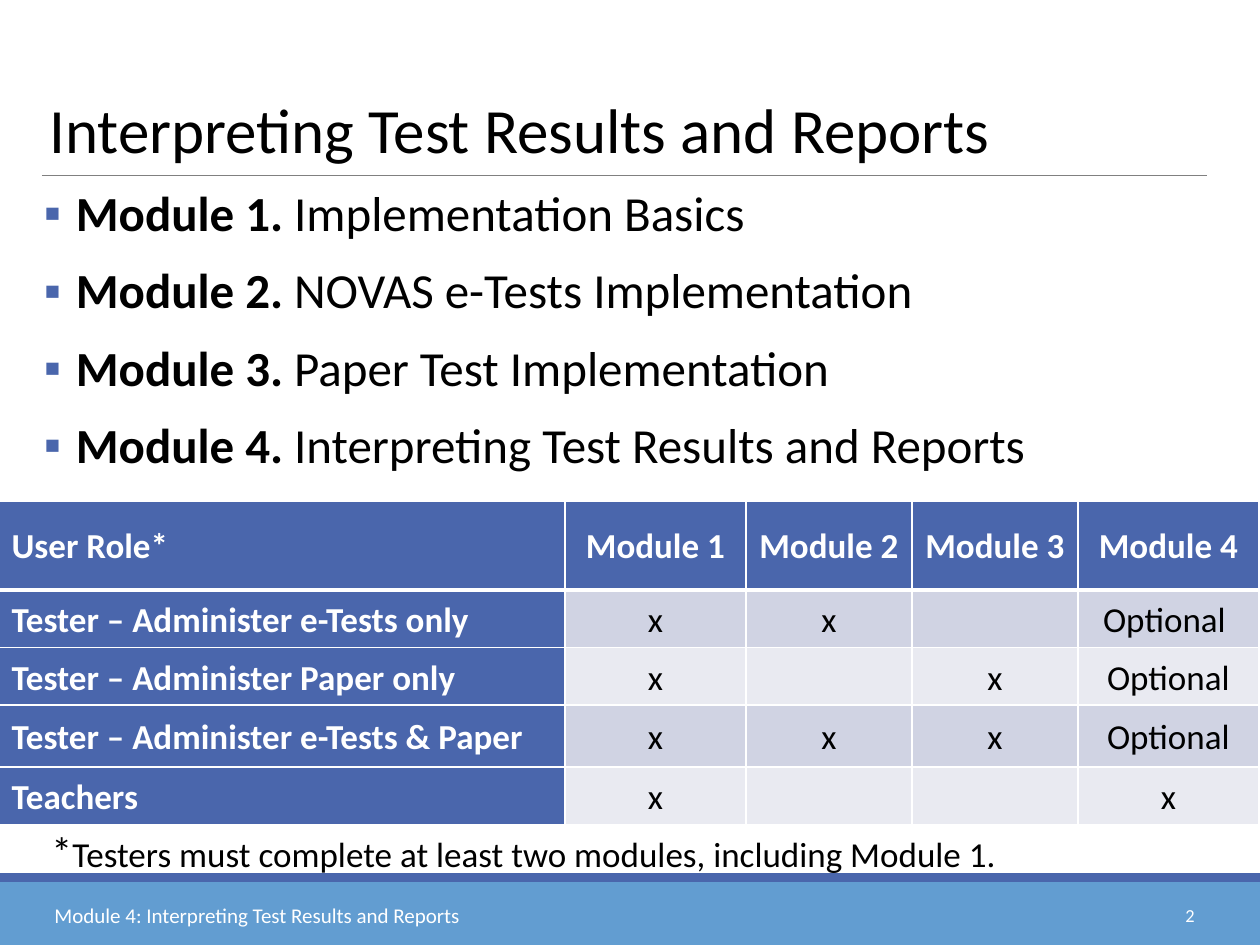
from lxml import etree
from pptx import Presentation
from pptx.dml.color import RGBColor
from pptx.enum.shapes import MSO_CONNECTOR, MSO_SHAPE
from pptx.enum.text import MSO_ANCHOR, PP_ALIGN
from pptx.oxml.ns import qn
from pptx.util import Pt

RECTANGLE = MSO_SHAPE.RECTANGLE
STRAIGHT = MSO_CONNECTOR.STRAIGHT
TOP, MIDDLE = MSO_ANCHOR.TOP, MSO_ANCHOR.MIDDLE
LEFT, CENTER, RIGHT = PP_ALIGN.LEFT, PP_ALIGN.CENTER, PP_ALIGN.RIGHT

PIXELS_PER_INCH = 126
WIDTH, HEIGHT = 1260, 945
FONT = "Calibri"
BLACK, WHITE, GRAY = "000000", "FFFFFF", "808080"
INDIGO, SKY = "4A66AC", "629DD1"
BANDS = ["D0D3E3", "E9EAF1"]

TITLE = "Interpreting Test Results and Reports"
MODULES = [
    "Implementation Basics",
    "NOVAS e-Tests Implementation",
    "Paper Test Implementation",
    TITLE,
]
ROLES = [
    ["User Role*"] + [f"Module {number}" for number in range(1, 5)],
    ["Tester – Administer e-Tests only", "x", "x", "", "Optional "],
    ["Tester – Administer Paper only", "x", "", "x", "Optional"],
    ["Tester – Administer e-Tests & Paper", "x", "x", "x", "Optional"],
    ["Teachers", "x", "", "", "x"],
]
COLUMN_WIDTHS = [566, 181, 166, 166, 181]
ROW_HEIGHTS = [89, 55, 55, 62, 55]


def px(value):
    return round(value * 914400 / PIXELS_PER_INCH)


def color(value):
    return RGBColor.from_string(value)


class SlideBuilder:
    def __init__(self, slide, font):
        self.slide = slide
        self.font = font

    def rectangle(self, left, top, width, height, fill):
        shape = self.slide.shapes.add_shape(
            RECTANGLE, px(left), px(top), px(width), px(height))
        shape.shadow.inherit = False
        shape.fill.solid()
        shape.fill.fore_color.rgb = color(fill)
        shape.line.fill.background()

    def line(self, left, top, right, bottom, stroke, points):
        connector = self.slide.shapes.add_connector(
            STRAIGHT, px(left), px(top), px(right), px(bottom))
        connector.line.color.rgb = color(stroke)
        connector.line.width = Pt(points)
        properties = connector._element.spPr
        etree.SubElement(properties, qn("a:effectLst"))

    def run(self, paragraph, text, size, text_color=BLACK, bold=False):
        run = paragraph.add_run()
        run.text = text
        run.font.name = self.font
        run.font.size = Pt(size)
        run.font.bold = bold
        run.font.color.rgb = color(text_color)

    def text_frame(self, left, top, width, height, anchor=TOP):
        box = self.slide.shapes.add_textbox(
            px(left), px(top), px(width), px(height))
        frame = box.text_frame
        frame.word_wrap = True
        frame.vertical_anchor = anchor
        return frame

    def text(self, left, top, width, height, runs, anchor=TOP,
             align=LEFT, text_color=BLACK, indent=0):
        frame = self.text_frame(left, top, width, height, anchor)
        paragraph = frame.paragraphs[0]
        paragraph.alignment = align
        if indent:
            paragraph._p.get_or_add_pPr().set("marL", str(px(indent)))
        for text, size in runs:
            self.run(paragraph, text, size, text_color)

    def bullets(self, left, top, width, height, items, size, indent):
        frame = self.text_frame(left, top, width, height)
        frame.margin_left = frame.margin_right = 0
        for index, (label, text) in enumerate(items):
            paragraph = frame.add_paragraph() if index else frame.paragraphs[0]
            paragraph.line_spacing = 0.9
            paragraph.space_before = Pt(12)
            paragraph.space_after = Pt(2)
            properties = paragraph._p.get_or_add_pPr()
            properties.set("marL", str(px(indent)))
            properties.set("indent", str(-px(indent)))
            bullet_color = etree.SubElement(properties, qn("a:buClr"))
            etree.SubElement(bullet_color, qn("a:srgbClr"), val=INDIGO)
            etree.SubElement(properties, qn("a:buFont"), typeface="Arial")
            etree.SubElement(properties, qn("a:buChar"), char="▪")
            self.run(paragraph, label, size, bold=True)
            self.run(paragraph, text, size)

    def borders(self, cell, widths):
        properties = cell._tc.get_or_add_tcPr()
        for side, points in zip("LRTB", widths):
            border = etree.SubElement(
                properties, qn(f"a:ln{side}"), w=str(Pt(points)))
            fill = etree.SubElement(border, qn("a:solidFill"))
            etree.SubElement(fill, qn("a:srgbClr"), val=WHITE)

    def table(self, left, top, column_widths, row_heights, rows, size):
        table = self.slide.shapes.add_table(
            len(rows), len(column_widths), px(left), px(top),
            px(sum(column_widths)), px(sum(row_heights))).table
        for column, width in zip(table.columns, column_widths):
            column.width = px(width)
        for row, height in zip(table.rows, row_heights):
            row.height = px(height)
        for row_index, values in enumerate(rows):
            top_width = 3 if row_index == 1 else 1
            bottom_width = 3 if row_index == 0 else 1
            for column_index, value in enumerate(values):
                cell = table.cell(row_index, column_index)
                heading = row_index == 0 or column_index == 0
                self.borders(cell, [1, 1, top_width, bottom_width])
                cell.fill.solid()
                cell.fill.fore_color.rgb = color(
                    INDIGO if heading else BANDS[(row_index - 1) % 2])
                cell.vertical_anchor = MIDDLE
                if value:
                    paragraph = cell.text_frame.paragraphs[0]
                    paragraph.alignment = CENTER if column_index else LEFT
                    paragraph.line_spacing = 1.07
                    paragraph.space_after = Pt(8)
                    self.run(paragraph, value, size,
                             WHITE if heading else BLACK, heading)


def main():
    presentation = Presentation()
    presentation.slide_width = px(WIDTH)
    presentation.slide_height = px(HEIGHT)
    slide = presentation.slides.add_slide(presentation.slide_layouts[6])
    builder = SlideBuilder(slide, FONT)

    builder.rectangle(0, 882, WIDTH, 63, SKY)
    builder.rectangle(0, 873, WIDTH, 9, INDIGO)
    builder.line(42, 175, 1207, 175, GRAY, 0.5)

    modules = [(f"Module {number}. ", name)
               for number, name in enumerate(MODULES, 1)]
    builder.bullets(44, 183, 1197, 320, modules, 28, 32)
    builder.table(-1, 501, COLUMN_WIDTHS, ROW_HEIGHTS, ROLES, 20)

    footnote = "Testers must complete at least two modules, including Module 1."
    builder.text(10, 819, 1302, 63, [("*", 24), (footnote, 20)], indent=29)
    builder.text(37, 84, 1213, 89, [(TITLE, 36)])
    builder.text(42, 890, 838, 50, [(f"Module 4: {TITLE}", 12)],
                 MIDDLE, LEFT, WHITE)
    builder.text(1023, 890, 184, 50, [("2", 10.5)], MIDDLE, RIGHT, WHITE)

    presentation.save("out.pptx")


if __name__ == "__main__":
    main()
